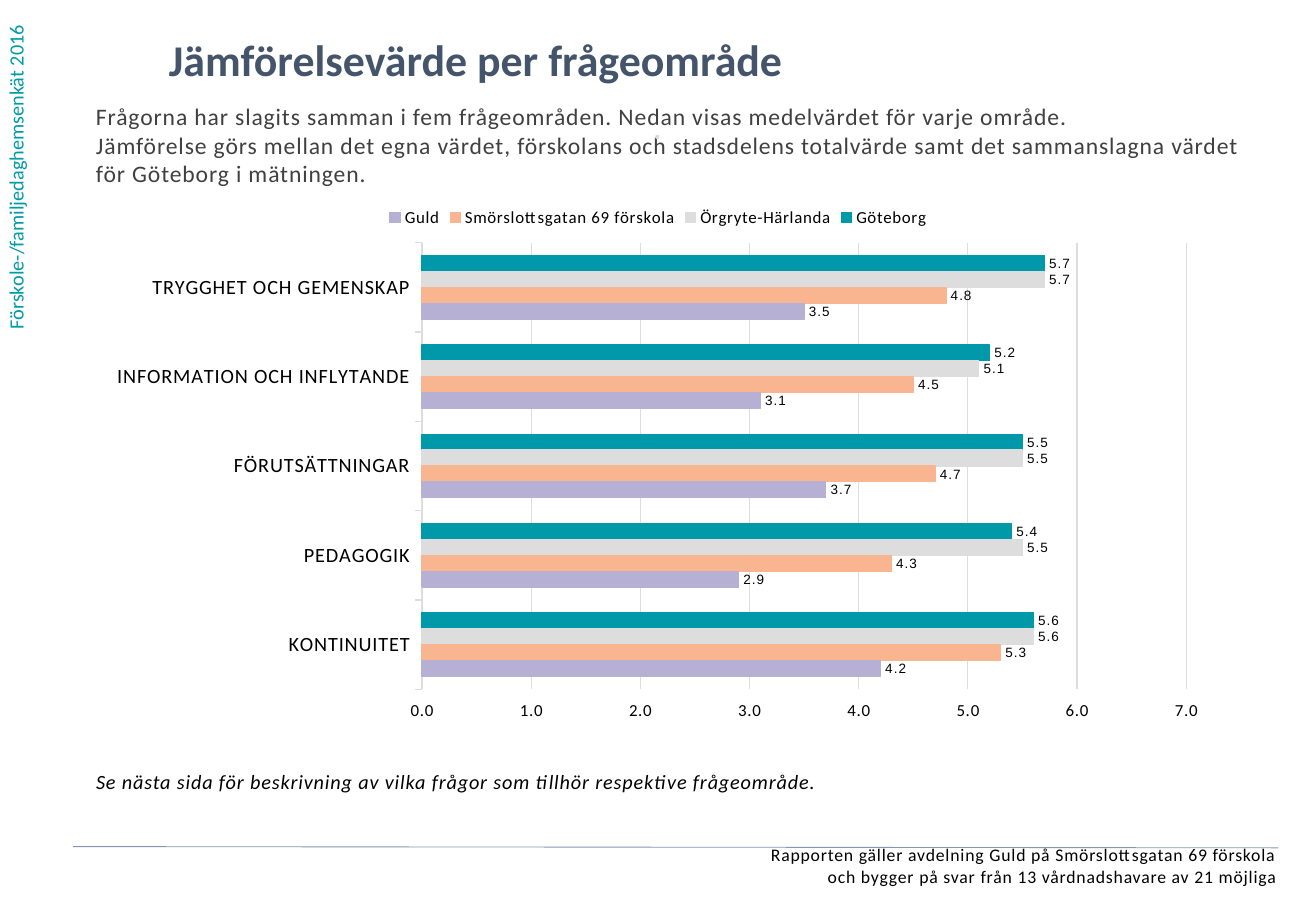
from lxml import etree
from pptx import Presentation
from pptx.chart.data import CategoryChartData
from pptx.dml.color import RGBColor
from pptx.enum.chart import XL_CHART_TYPE as CHART
from pptx.enum.chart import XL_LABEL_POSITION as LABEL_POS
from pptx.enum.chart import XL_LEGEND_POSITION as LEGEND_POS
from pptx.enum.chart import XL_TICK_LABEL_POSITION as TICK_LABEL
from pptx.enum.chart import XL_TICK_MARK as TICK
from pptx.enum.shapes import MSO_CONNECTOR as CONNECTOR
from pptx.enum.text import PP_ALIGN as ALIGN
from pptx.oxml import parse_xml
from pptx.oxml.ns import nsdecls, qn
from pptx.util import Pt

PX = 9144  # EMU, 100 px to the inch
COLORS = {
    "teal": "009BA4", "title": "44546A", "body": "404040", "black": "000000",
    "dot": "D2D9E2", "rule": "8497B0", "grid": "DDDDDD",
    "city": "0099AA", "district": "DDDDDD", "school": "F9B590", "unit": "B6B1D4",
}
AREAS = ["TRYGGHET OCH GEMENSKAP", "INFORMATION OCH INFLYTANDE",
         "FÖRUTSÄTTNINGAR", "PEDAGOGIK", "KONTINUITET"]
SERIES = [
    ("Göteborg", "city", (5.7, 5.2, 5.5, 5.4, 5.6)),
    ("Örgryte-Härlanda", "district", (5.7, 5.1, 5.5, 5.5, 5.6)),
    ("Smörslottsgatan 69 förskola", "school", (4.8, 4.5, 4.7, 4.3, 5.3)),
    ("Guld", "unit", (3.5, 3.1, 3.7, 2.9, 4.2)),
]
PLOT_BOX = {"x": 0.29, "y": 0.09, "w": 0.68, "h": 0.83}
NUMBER = "0.0;0.0"
SPACING = "50"


def rgb(name):
    return RGBColor.from_string(COLORS[name])


def apply(obj, **values):
    for name, value in values.items():
        setattr(obj, name, value)


def style_line(line, color, width=0.75):
    line.color.rgb = rgb(color)
    line.width = Pt(width)


class SlideBuilder:
    font = "Calibri"

    def __init__(self, prs):
        self.s = prs.slides.add_slide(prs.slide_layouts[6])

    def text(self, box, lines, size, color, align=ALIGN.LEFT, spaced=True,
             inset=(0, 0), vert=None, **font):
        """Add one paragraph whose lines are parted by line breaks."""
        sp = self.s.shapes.add_textbox(*(v * PX for v in box))
        tf = sp.text_frame
        x, y = (v * PX for v in inset)
        apply(tf, word_wrap=True, margin_left=x, margin_right=x,
              margin_top=y, margin_bottom=y)
        if vert:
            tf._txBody.bodyPr.set("vert", vert)
        p = tf.paragraphs[0]
        p.alignment = align
        for i, line in enumerate(lines):
            if i:
                p.add_line_break()
            r = p.add_run()
            r.text = line
            apply(r.font, name=self.font, size=Pt(size), **font)
            r.font.color.rgb = rgb(color)
            if spaced:
                r.font._element.set("spc", SPACING)

    def rule(self, x1, y1, x2, y2, color, width):
        line = self.s.shapes.add_connector(
            CONNECTOR.STRAIGHT, *(v * PX for v in (x1, y1, x2, y2)))
        style_line(line.line, color, width)
        etree.SubElement(line._element.spPr, qn("a:effectLst"))

    def bar_chart(self, box, categories, series):
        data = CategoryChartData(number_format=NUMBER)
        data.categories = categories
        for name, _, values in series:
            data.add_series(name, values)
        chart = self.s.shapes.add_chart(
            CHART.BAR_CLUSTERED, *(v * PX for v in box), data).chart
        apply(chart, has_title=False, has_legend=True)
        apply(chart.font, name=self.font, size=Pt(10))
        chart.font.color.rgb = rgb("black")
        apply(chart.legend, position=LEGEND_POS.TOP, include_in_layout=False)
        chart.legend.font.size = Pt(10)

        plot = chart.plots[0]
        apply(plot, gap_width=162, overlap=0, vary_by_categories=False)
        for ser, (_, color, _) in zip(plot.series, series):
            ser.format.fill.solid()
            ser.format.fill.fore_color.rgb = rgb(color)
            style_line(ser.format.line, color)
            labels = ser.data_labels
            apply(labels, show_value=True, number_format=NUMBER,
                  number_format_is_linked=False, position=LABEL_POS.OUTSIDE_END)
            apply(labels.font, name="Arial", size=Pt(8))
            labels.font.color.rgb = rgb("black")

        cat, val = chart.category_axis, chart.value_axis
        apply(cat, reverse_order=True, major_tick_mark=TICK.OUTSIDE)
        cat.tick_labels.font.size = Pt(12)
        style_line(cat.format.line, "grid")
        apply(val, minimum_scale=0, maximum_scale=7, major_unit=1,
              major_tick_mark=TICK.OUTSIDE, has_major_gridlines=True,
              tick_label_position=TICK_LABEL.HIGH)
        apply(val.tick_labels, number_format=NUMBER, number_format_is_linked=False)
        val.tick_labels.font.size = Pt(10)
        val.format.line.fill.background()
        style_line(val.major_gridlines.format.line, "grid")

        self.place_plot(chart)
        for props in chart.element.iter(qn("a:defRPr")):
            props.set("spc", SPACING)

    def place_plot(self, chart):
        area = chart.element.find(".//" + qn("c:plotArea"))
        for old in area.findall(qn("c:layout")):
            area.remove(old)
        edges = "".join(f'<c:{k} val="{v}"/>' for k, v in PLOT_BOX.items())
        area.insert(0, parse_xml(
            f'<c:layout {nsdecls("c")}><c:manualLayout>'
            '<c:layoutTarget val="inner"/><c:xMode val="edge"/>'
            f'<c:yMode val="edge"/>{edges}</c:manualLayout></c:layout>'))


def main():
    prs = Presentation()
    apply(prs, slide_width=1083 * PX, slide_height=750 * PX)
    b = SlideBuilder(prs)
    b.text((-2, 0, 40, 281), ["Förskole-/familjedaghemsenkät 2016"], 12, "teal",
           spaced=False, inset=(10, 5), vert="vert270")
    b.text((139, 27, 834, 57), ["Jämförelsevärde per frågeområde"], 26, "title",
           spaced=False, bold=True)
    b.text((79, 84, 946, 101), [
        "Frågorna har slagits samman i fem frågeområden. "
        "Nedan visas medelvärdet för varje område.",
        "Jämförelse görs mellan det egna värdet, förskolans och stadsdelens "
        "totalvärde samt det sammanslagna värdet för Göteborg i mätningen.",
    ], 14, "body")
    b.text((12, 695, 1039, 43), [
        "Rapporten gäller avdelning Guld på Smörslottsgatan 69 förskola",
        "och bygger på svar från 13 vårdnadshavare av 21 möjliga",
    ], 10.5, "black", align=ALIGN.RIGHT)
    b.text((387, 102, 308, 39), ["⋅"], 12, "dot", align=ALIGN.CENTER, bold=True)
    b.text((79, 633, 925, 67), [
        "Se nästa sida för beskrivning av vilka frågor som tillhör "
        "respektive frågeområde."], 12, "black", italic=True)
    b.bar_chart((79, 160, 925, 443), AREAS, SERIES)
    b.rule(60, 697, 1052, 698, "rule", 0.5)
    prs.save("out.pptx")


if __name__ == "__main__":
    main()
